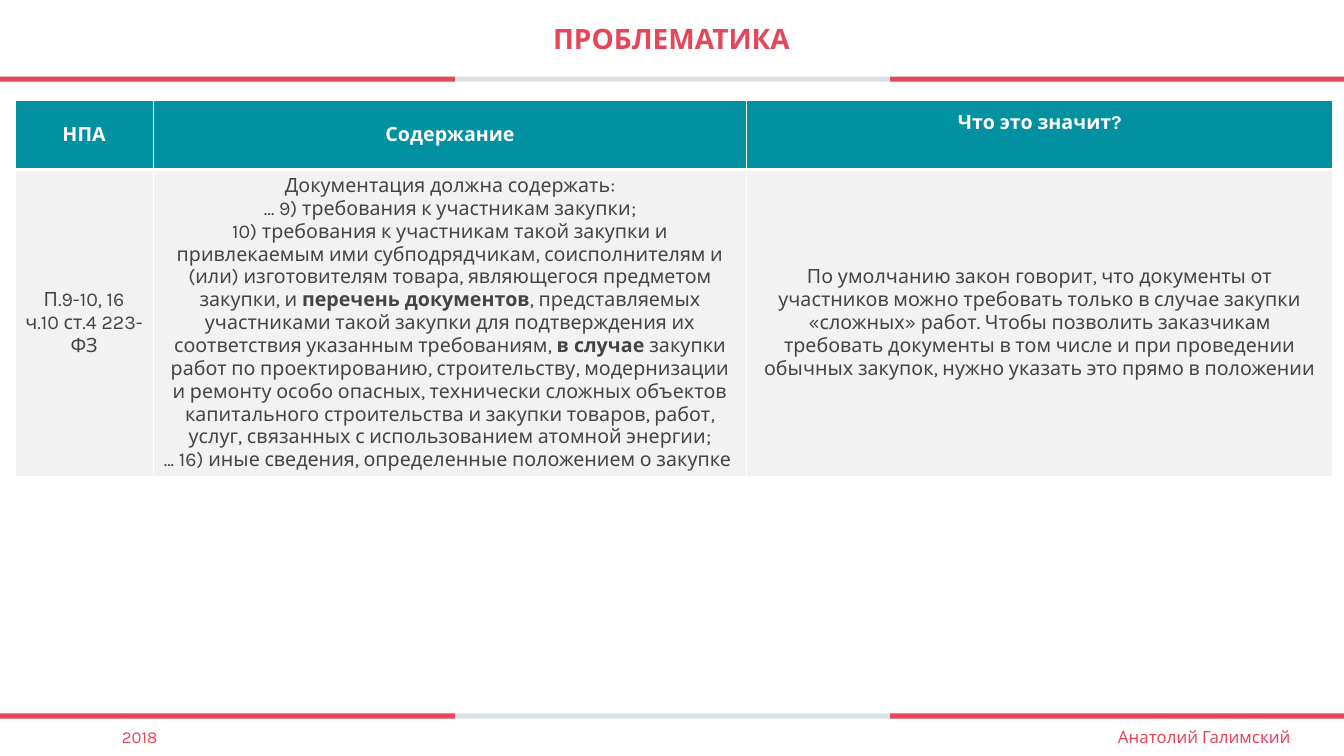
"""Build the slide on procurement law issues."""
import dataclasses

import lxml.etree
import pptx
import pptx.dml.color
import pptx.enum.shapes
import pptx.enum.text
import pptx.oxml.ns
import pptx.util

Cm = pptx.util.Cm
Pt = pptx.util.Pt
RGBColor = pptx.dml.color.RGBColor
MIDDLE = pptx.enum.text.MSO_ANCHOR.MIDDLE
TOP = pptx.enum.text.MSO_ANCHOR.TOP

RED = RGBColor(0xE4, 0x46, 0x5A)
GREY = RGBColor(0xDB, 0xE1, 0xE4)
TEAL = RGBColor(0x02, 0x91, 0xA0)
PALE = RGBColor(0xF2, 0xF2, 0xF2)
DARK = RGBColor(0x44, 0x44, 0x44)
WHITE = RGBColor(0xFF, 0xFF, 0xFF)
FONT = "Karla"


@dataclasses.dataclass
class Run:
    text: str
    bold: bool = False


@dataclasses.dataclass
class Bar:
    left: float
    width: float
    color: RGBColor


@dataclasses.dataclass
class Label:
    text: str
    left: float
    top: float
    width: float
    height: float
    size: int
    bold: bool = False
    anchor: pptx.enum.text.MSO_ANCHOR = TOP


@dataclasses.dataclass
class Row:
    height: float
    fill: RGBColor
    color: RGBColor
    edges: dict[str, int]
    cells: list[list[list[Run]]]


BARS = [Bar(0, 11.48, RED), Bar(22.43, 11.44, RED), Bar(11.48, 10.95, GREY)]
BAR_TOPS = [1.93, 17.98]

LABELS = [
    Label("ПРОБЛЕМАТИКА", 5.44, 0, 22.96, 1.93, 20, True, MIDDLE),
    Label("Анатолий Галимский", 26.83, 18.19, 7.04, 0.76, 12),
    Label("2018", 0, 18.19, 7.04, 0.76, 12),
]

WIDTHS = [3.48, 14.96, 14.76]
HEADS = ["НПА", "Содержание", "Что это значит?"]
ROWS = [
    Row(1.73, TEAL, WHITE, {"lnL": 1, "lnR": 1, "lnT": 1, "lnB": 3},
        [[[Run(head, True)]] for head in HEADS]),
    Row(7.7, PALE, DARK, {"lnL": 1, "lnR": 1, "lnT": 3, "lnB": 1}, [
        [[Run("П.9-10, 16 ч.10 ст.4 223-ФЗ")]],
        [
            [Run("Документация должна содержать:")],
            [Run("… 9) требования к участникам закупки;")],
            [
                Run("10) требования к участникам такой закупки и привлекаемым ими "
                    "субподрядчикам, соисполнителям и (или) изготовителям товара, "
                    "являющегося предметом закупки, и "),
                Run("перечень документов", True),
                Run(", представляемых участниками такой закупки для подтверждения "
                    "их соответствия указанным требованиям, "),
                Run("в случае ", True),
                Run("закупки работ по проектированию, строительству, модернизации "
                    "и ремонту особо опасных, технически сложных объектов "
                    "капитального строительства и закупки товаров, работ, услуг, "
                    "связанных с использованием атомной энергии;"),
            ],
            [Run("... 16) иные сведения, определенные положением о закупке ")],
        ],
        [[Run("По умолчанию закон говорит, что документы от участников можно "
              "требовать только в случае закупки «сложных» работ. Чтобы позволить "
              "заказчикам требовать документы в том числе и при проведении обычных "
              "закупок, нужно указать это прямо в положении")]],
    ]),
]


def write(frame, paras: list[list[Run]], size: int, color: RGBColor) -> None:
    """Fill a text frame with centred paragraphs, run by run."""
    for i, runs in enumerate(paras):
        para = frame.paragraphs[0] if i == 0 else frame.add_paragraph()
        para.alignment = pptx.enum.text.PP_ALIGN.CENTER
        for item in runs:
            run = para.add_run()
            run.text = item.text
            run.font.name = FONT
            run.font.size = Pt(size)
            run.font.bold = item.bold
            run.font.color.rgb = color


def add_bar(slide, bar: Bar, top: float) -> None:
    """Draw one part of a rule."""
    shape = slide.shapes.add_shape(
        pptx.enum.shapes.MSO_SHAPE.RECTANGLE,
        Cm(bar.left), Cm(top), Cm(bar.width), Cm(0.13))
    shape.shadow.inherit = False
    shape.fill.solid()
    shape.fill.fore_color.rgb = bar.color
    shape.line.fill.background()


def add_label(slide, label: Label) -> None:
    """Draw one red text box."""
    box = slide.shapes.add_textbox(
        Cm(label.left), Cm(label.top), Cm(label.width), Cm(label.height))
    frame = box.text_frame
    frame.word_wrap = True
    frame.vertical_anchor = label.anchor
    write(frame, [[Run(label.text, label.bold)]], label.size, RED)


def add_edge(cell, tag: str, width: int) -> None:
    """Give a cell one white border."""
    qn = pptx.oxml.ns.qn
    edge = lxml.etree.SubElement(
        cell._tc.get_or_add_tcPr(), qn("a:" + tag), w=str(Pt(width)))
    fill = lxml.etree.SubElement(edge, qn("a:solidFill"))
    lxml.etree.SubElement(fill, qn("a:srgbClr"), val=str(WHITE))


def add_grid(slide) -> None:
    """Draw the table of rules and their meaning."""
    grid = slide.shapes.add_table(
        len(ROWS), len(WIDTHS), Cm(0.38), Cm(2.54), Cm(sum(WIDTHS)),
        Cm(sum(row.height for row in ROWS))).table
    grid.horz_banding = False
    for col, width in zip(grid.columns, WIDTHS):
        col.width = Cm(width)
    for line, row in zip(grid.rows, ROWS):
        line.height = Cm(row.height)
        for cell, paras in zip(line.cells, row.cells):
            for tag, width in row.edges.items():
                add_edge(cell, tag, width)
            cell.fill.solid()
            cell.fill.fore_color.rgb = row.fill
            cell.vertical_anchor = MIDDLE
            write(cell.text_frame, paras, 14, row.color)
    grid.cell(0, 2).margin_bottom = Cm(0.73)


def main() -> None:
    """Build and save the deck."""
    deck = pptx.Presentation()
    deck.slide_width, deck.slide_height = Cm(33.87), Cm(19.05)
    slide = deck.slides.add_slide(deck.slide_layouts[6])
    for top in BAR_TOPS:
        for bar in BARS:
            add_bar(slide, bar, top)
    add_grid(slide)
    for label in LABELS:
        add_label(slide, label)
    deck.save("out.pptx")


if __name__ == "__main__":
    main()
